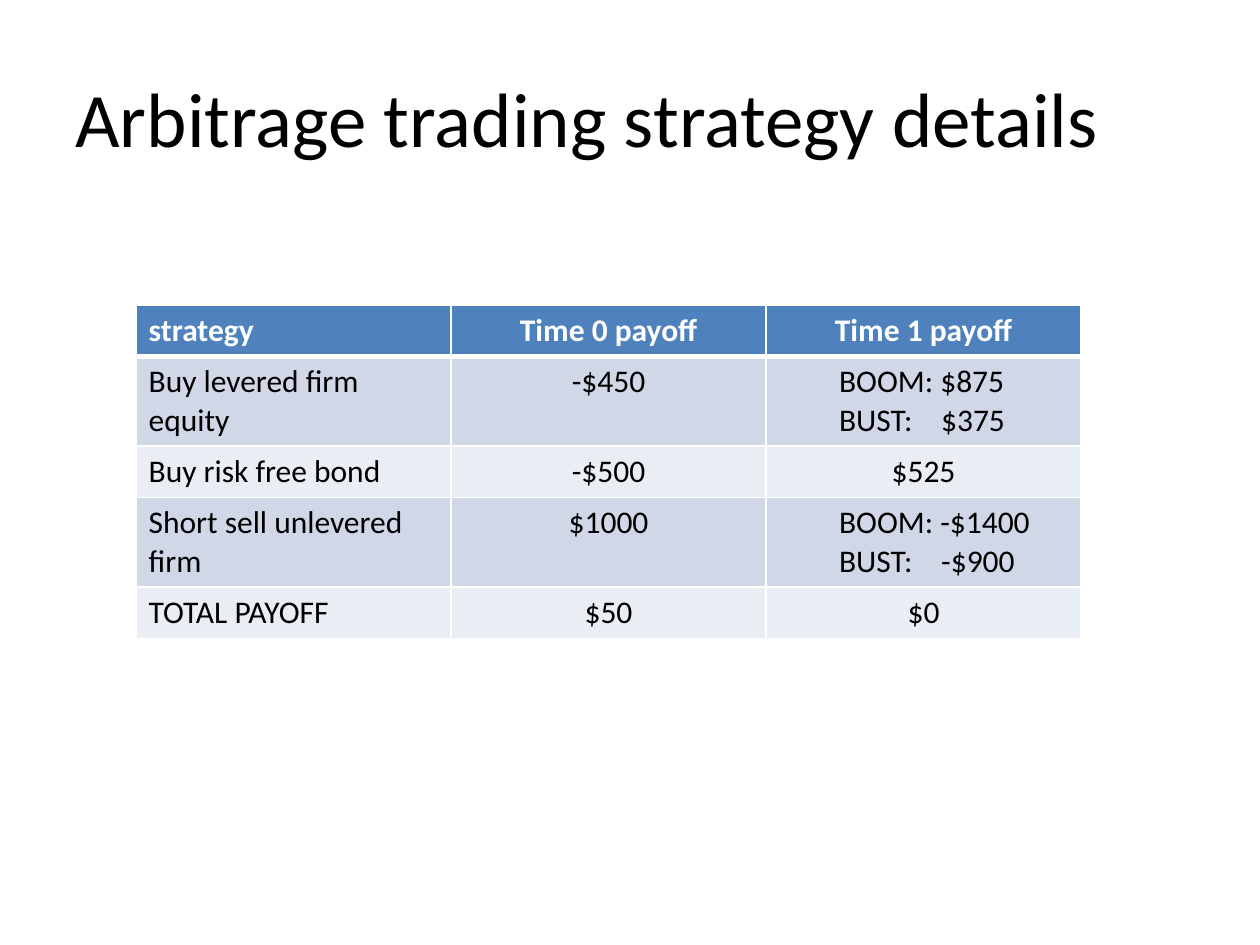
import pptx
import pptx.util
import pptx.dml.color
import pptx.enum.text
import pptx.oxml
import pptx.oxml.ns

RGBColor = pptx.dml.color.RGBColor
Inches = pptx.util.Inches
Pt = pptx.util.Pt
Align = pptx.enum.text.PP_ALIGN

BLACK = RGBColor(0x00, 0x00, 0x00)
WHITE = RGBColor(0xFF, 0xFF, 0xFF)
HEADER_BLUE = RGBColor(0x4F, 0x81, 0xBD)
BAND_DARK = RGBColor(0xD0, 0xD8, 0xE8)
BAND_LIGHT = RGBColor(0xE9, 0xED, 0xF4)

FONT = "Calibri"
LINE_HEIGHT = 0.3
ROW_PADDING = 0.11
OUTCOME_INDENT = 0.58
OUTCOME_TAB = 0.81

PAYOFFS = [
    ("strategy", "Time 0 payoff", "Time 1 payoff"),
    ("Buy levered firm equity", "-$450", "BOOM: $875\nBUST:\t$375"),
    ("Buy risk free bond", "-$500", "$525"),
    ("Short sell unlevered firm", "$1000", "BOOM: -$1400\nBUST:\t-$900"),
    ("TOTAL PAYOFF", "$50", "$0"),
]
TWO_LINE_ROWS = (1, 3)


def style_paragraph(paragraph, size, color, align, bold=False):
    paragraph.alignment = align
    paragraph.font.name = FONT
    paragraph.font.size = Pt(size)
    paragraph.font.bold = bold
    paragraph.font.color.rgb = color


def add_tab_stop(paragraph, position):
    tabs = pptx.oxml.parse_xml(
        f'<a:tabLst {pptx.oxml.ns.nsdecls("a")}>'
        f'<a:tab pos="{Inches(position)}" algn="l"/></a:tabLst>'
    )
    paragraph._p.get_or_add_pPr().insert(0, tabs)


def add_borders(cell, widths):
    properties = cell._tc.get_or_add_tcPr()
    for index, (side, width) in enumerate(widths.items()):
        border = pptx.oxml.parse_xml(
            f'<a:ln{side} {pptx.oxml.ns.nsdecls("a")} w="{Pt(width)}">'
            f'<a:solidFill><a:srgbClr val="{WHITE}"/></a:solidFill></a:ln{side}>'
        )
        properties.insert(index, border)


def add_title(slide, left, top, width, height):
    title = slide.shapes.add_textbox(left, top, width, height).text_frame
    title.word_wrap = True
    title.vertical_anchor = pptx.enum.text.MSO_ANCHOR.MIDDLE
    title.text = "Arbitrage trading strategy details"
    style_paragraph(title.paragraphs[0], 44, BLACK, Align.LEFT)


def fill_payoff_cell(cell, text, row, column):
    header = row == 0
    has_outcomes = "\n" in text
    cell.text = text
    cell.fill.solid()
    cell.fill.fore_color.rgb = (
        HEADER_BLUE if header else BAND_DARK if row % 2 else BAND_LIGHT
    )
    add_borders(cell, {
        "L": 1, "R": 1, "T": 3 if row == 1 else 1, "B": 3 if header else 1,
    })
    if has_outcomes:
        cell.margin_left = Inches(OUTCOME_INDENT)
    align = Align.LEFT if column == 0 or has_outcomes else Align.CENTER
    for paragraph in cell.text_frame.paragraphs:
        style_paragraph(paragraph, 18, WHITE if header else BLACK, align, header)
        if has_outcomes:
            add_tab_stop(paragraph, OUTCOME_TAB)


def add_payoff_table(slide, left, top, width):
    line_counts = [2 if row in TWO_LINE_ROWS else 1 for row in range(len(PAYOFFS))]
    heights = [Inches(lines * LINE_HEIGHT + ROW_PADDING) for lines in line_counts]
    table = slide.shapes.add_table(
        len(PAYOFFS), len(PAYOFFS[0]), left, top, width, sum(heights)
    ).table
    for row, (texts, height) in enumerate(zip(PAYOFFS, heights)):
        table.rows[row].height = height
        for column, text in enumerate(texts):
            fill_payoff_cell(table.cell(row, column), text, row, column)


def main():
    deck = pptx.Presentation()
    deck.slide_width = Inches(10)
    deck.slide_height = Inches(7.5)
    slide = deck.slides.add_slide(deck.slide_layouts[6])
    width, height = deck.slide_width, deck.slide_height
    add_title(slide, int(width * 0.05), int(height * 0.04),
              int(width * 0.9), int(height / 6))
    add_payoff_table(slide, Inches(1.08), Inches(2.42), int(width * 0.75))
    deck.save("out.pptx")


if __name__ == "__main__":
    main()
